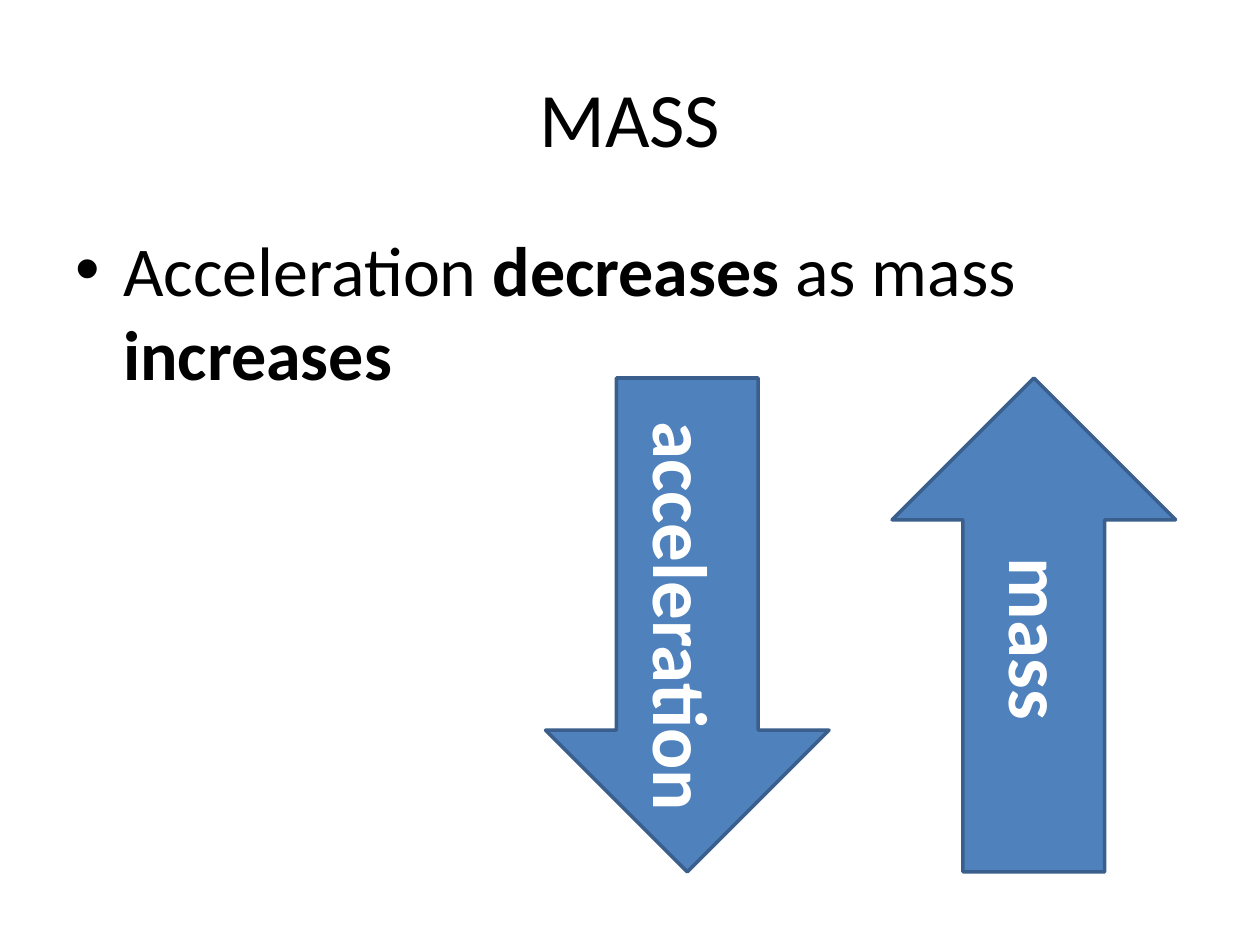
from pptx import Presentation
from pptx.dml.color import RGBColor
from pptx.enum.shapes import MSO_SHAPE
from pptx.enum.text import MSO_ANCHOR, MSO_AUTO_SIZE, PP_ALIGN
from pptx.util import Inches, Pt
from lxml.etree import SubElement
from pptx.oxml.ns import qn

BLACK = RGBColor(0x00, 0x00, 0x00)
WHITE = RGBColor(0xFF, 0xFF, 0xFF)
BLUE = RGBColor(0x4F, 0x81, 0xBD)
EDGE = RGBColor(0x3A, 0x5F, 0x8C)
CELL = 0.5  # inches per grid column and row
COLS, ROWS = 20, 15


def write(frame, runs, size=44, color=BLACK, align=PP_ALIGN.LEFT):
    """Fill a frame with one paragraph of (text, bold) runs."""
    para = frame.paragraphs[0]
    para.alignment = align
    for text, bold in runs:
        run = para.add_run()
        run.text = text
        font = run.font
        font.name, font.size, font.bold = "Calibri", Pt(size), bold
        font.color.rgb = color
    return para


class Deck:
    def __init__(self):
        self.file = Presentation()
        self.file.slide_width = Inches(COLS * CELL)
        self.file.slide_height = Inches(ROWS * CELL)
        self.slide = self.file.slides.add_slide(self.file.slide_layouts[6])

    def box(self, grid):
        """Add a text box at (column, row, columns, rows)."""
        return self.slide.shapes.add_textbox(*[Inches(n * CELL) for n in grid])

    def title(self, text, grid):
        frame = self.box(grid).text_frame
        frame.word_wrap = True
        frame.vertical_anchor = MSO_ANCHOR.MIDDLE
        write(frame, [(text, False)], align=PP_ALIGN.CENTER)

    def bullet(self, runs, grid):
        frame = self.box(grid).text_frame
        frame.word_wrap = True
        para = write(frame, runs, size=40)
        para.space_before = Pt(8)
        props = para._p.get_or_add_pPr()
        indent = Inches(0.38)
        props.set("marL", str(indent))
        props.set("indent", str(-indent))
        SubElement(props, qn("a:buFont"), typeface="Arial")
        SubElement(props, qn("a:buChar"), char="•")

    def arrow(self, grid, turn=0):
        shape = self.slide.shapes.add_shape(
            MSO_SHAPE.DOWN_ARROW, *[Inches(n * CELL) for n in grid])
        shape.rotation = turn
        shape.shadow.inherit = False
        shape.fill.solid()
        shape.fill.fore_color.rgb = BLUE
        shape.line.color.rgb = EDGE
        shape.line.width = Pt(2)

    def label(self, text, grid):
        box = self.box(grid)
        box.rotation = 90
        frame = box.text_frame
        frame.word_wrap = False
        frame.auto_size = MSO_AUTO_SIZE.SHAPE_TO_FIT_TEXT
        write(frame, [(text, True)], color=WHITE)


def main():
    deck = Deck()

    # Heading and statement
    deck.title("MASS", (1, 0.6, 18, 2.5))
    deck.bullet([("Acceleration ", False), ("decreases ", True),
                 ("as mass ", False), ("increases", True)],
                (1, 3.5, 18, 9.9))

    # Opposing arrows: acceleration falls, mass rises
    for col, turn in ((8.66, 0), (14.16, 180)):
        deck.arrow((col, 6, 4.5, 7.84), turn)

    # Arrow labels, reading downwards
    deck.label("acceleration", (7.52, 8.98, 6.66, 1.68))
    deck.label("mass", (15, 9.32, 3, 1.68))

    deck.file.save("out.pptx")


if __name__ == "__main__":
    main()
